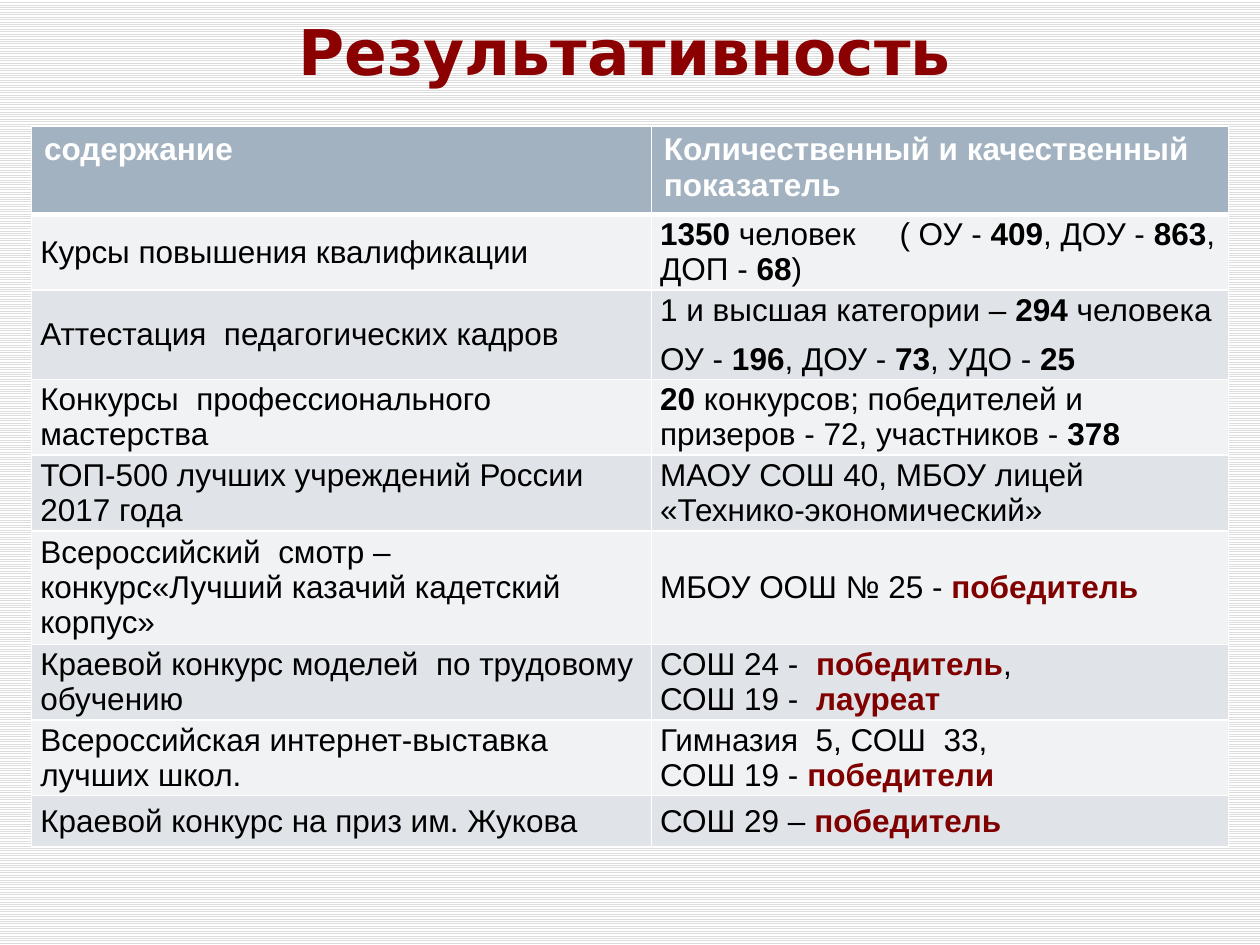
from lxml import etree
from pptx import Presentation
from pptx.dml.color import RGBColor
from pptx.enum.dml import MSO_PATTERN
from pptx.enum.text import MSO_ANCHOR, PP_ALIGN
from pptx.oxml.ns import qn
from pptx.util import Inches, Pt

LINES = MSO_PATTERN.LIGHT_HORIZONTAL
TOP, MIDDLE, BOTTOM = MSO_ANCHOR.TOP, MSO_ANCHOR.MIDDLE, MSO_ANCHOR.BOTTOM
CENTER = PP_ALIGN.CENTER

WHITE = RGBColor(0xFF, 0xFF, 0xFF)
BLACK = RGBColor(0, 0, 0)
STRIPE = RGBColor(0xDD, 0xDD, 0xDD)
TITLE_RED = RGBColor(0x8B, 0, 0)
AWARD_RED = RGBColor(0x80, 0, 0)
HEADER = RGBColor(0xA3, 0xB2, 0xC1)
BANDS = (RGBColor(0xF0, 0xF2, 0xF4), RGBColor(0xE0, 0xE4, 0xE9))

COLUMNS = (4.92, 4.58)
ROWS = (0.7, 0.6, 0.71, 0.6, 0.6, 0.9, 0.6, 0.6, 0.41)
TAB_STOP = 1.9

HEADINGS = ("содержание", "Количественный и качественный показатель")
# Asterisks enclose bold text, "\n" starts a paragraph, "\v" breaks a line.
RESULTS = (
    ("Курсы повышения квалификации",
     "*1350* человек\t( ОУ - *409*, ДОУ - *863*, ДОП - *68*)"),
    ("Аттестация  педагогических кадров",
     "1 и высшая категории – *294* человека\n"
     "ОУ - *196*, ДОУ - *73*, УДО - *25*"),
    ("Конкурсы  профессионального мастерства",
     "*20* конкурсов; победителей и  призеров - 72, участников - *378*"),
    ("ТОП-500 лучших учреждений России 2017 года",
     "МАОУ СОШ 40, МБОУ лицей «Технико-экономический»"),
    ("Всероссийский  смотр – конкурс«Лучший казачий кадетский корпус»",
     "МБОУ ООШ № 25 - *победитель*"),
    ("Краевой конкурс моделей  по трудовому обучению",
     "СОШ 24 -  *победитель*, \vСОШ 19 -  *лауреат*"),
    ("Всероссийская интернет-выставка лучших школ.",
     "Гимназия  5, СОШ  33, \vСОШ 19 - *победители*"),
    ("Краевой конкурс на приз им. Жукова", "СОШ 29 – *победитель*"),
)


def add_run(p, text, color, bold, size=18, font="Arial"):
    r = p.add_run()
    r.text = text
    r.font.name, r.font.size = font, Pt(size)
    r.font.bold, r.font.color.rgb = bold, color


def add_marked_text(p, text):
    """Bold what stands between asterisks; bold words, unlike numbers, are red."""
    for i, part in enumerate(text.split("*")):
        bold = i % 2 == 1
        color = AWARD_RED if bold and not part.isdigit() else BLACK
        for j, line in enumerate(part.split("\v")):
            if j:
                p.add_line_break()
            if line:
                add_run(p, line, color, bold)


def add_tab_stop(p):
    tabs = etree.SubElement(p._p.get_or_add_pPr(), qn("a:tabLst"))
    etree.SubElement(tabs, qn("a:tab"), pos=str(Inches(TAB_STOP)), algn="l")


def format_cell(cell, fill, anchor, inset_x, inset_y, top, bottom):
    """Set margins, white borders (top and bottom in points) and fill."""
    cell.vertical_anchor = anchor
    cell.margin_left = cell.margin_right = Inches(inset_x)
    cell.margin_top = cell.margin_bottom = Inches(inset_y)
    tc_pr = cell._tc.get_or_add_tcPr()
    for side, width in (("L", 1), ("R", 1), ("T", top), ("B", bottom)):
        ln = etree.SubElement(tc_pr, qn(f"a:ln{side}"), w=str(Pt(width)))
        color = etree.SubElement(ln, qn("a:solidFill"))
        etree.SubElement(color, qn("a:srgbClr"), val=str(WHITE))
    cell.fill.solid()
    cell.fill.fore_color.rgb = fill


def fill_body_cell(cell, text, row):
    format_cell(cell, BANDS[row % 2], MIDDLE, 0.07, 0, 1 if row else 3, 1)
    tf = cell.text_frame
    for i, line in enumerate(text.split("\n")):
        p = tf.add_paragraph() if i else tf.paragraphs[0]
        p.space_after = Pt(8)
        if "\t" in line:
            add_tab_stop(p)
        add_marked_text(p, line)


def add_results_table(slide):
    table = slide.shapes.add_table(
        len(ROWS), len(COLUMNS), Inches(0.25), Inches(1),
        Inches(sum(COLUMNS)), Inches(sum(ROWS))).table
    for column, width in zip(table.columns, COLUMNS):
        column.width = Inches(width)
    for row, height in zip(table.rows, ROWS):
        row.height = Inches(height)
    for col, heading in enumerate(HEADINGS):
        cell = table.cell(0, col)
        format_cell(cell, HEADER, TOP, 0.1, 0.05, 1, 3)
        add_run(cell.text_frame.paragraphs[0], heading, WHITE, True)
    for row, texts in enumerate(RESULTS):
        for col, text in enumerate(texts):
            fill_body_cell(table.cell(row + 1, col), text, row)


def add_title(slide):
    box = slide.shapes.add_textbox(
        Inches(0.67), Inches(0.08), Inches(8.75), Inches(0.67))
    tf = box.text_frame
    tf.word_wrap = True
    tf.vertical_anchor = BOTTOM
    p = tf.paragraphs[0]
    p.alignment = CENTER
    add_run(p, "Результативность ", TITLE_RED, True, 36, "DejaVu Sans")


def set_background(slide):
    fill = slide.background.fill
    fill.patterned()
    fill.pattern = LINES
    fill.fore_color.rgb = STRIPE
    fill.back_color.rgb = WHITE


def main():
    prs = Presentation()
    prs.slide_width, prs.slide_height = Inches(10), Inches(7.5)
    slide = prs.slides.add_slide(prs.slide_layouts[6])
    set_background(slide)
    add_title(slide)
    add_results_table(slide)
    prs.save("out.pptx")


if __name__ == "__main__":
    main()
